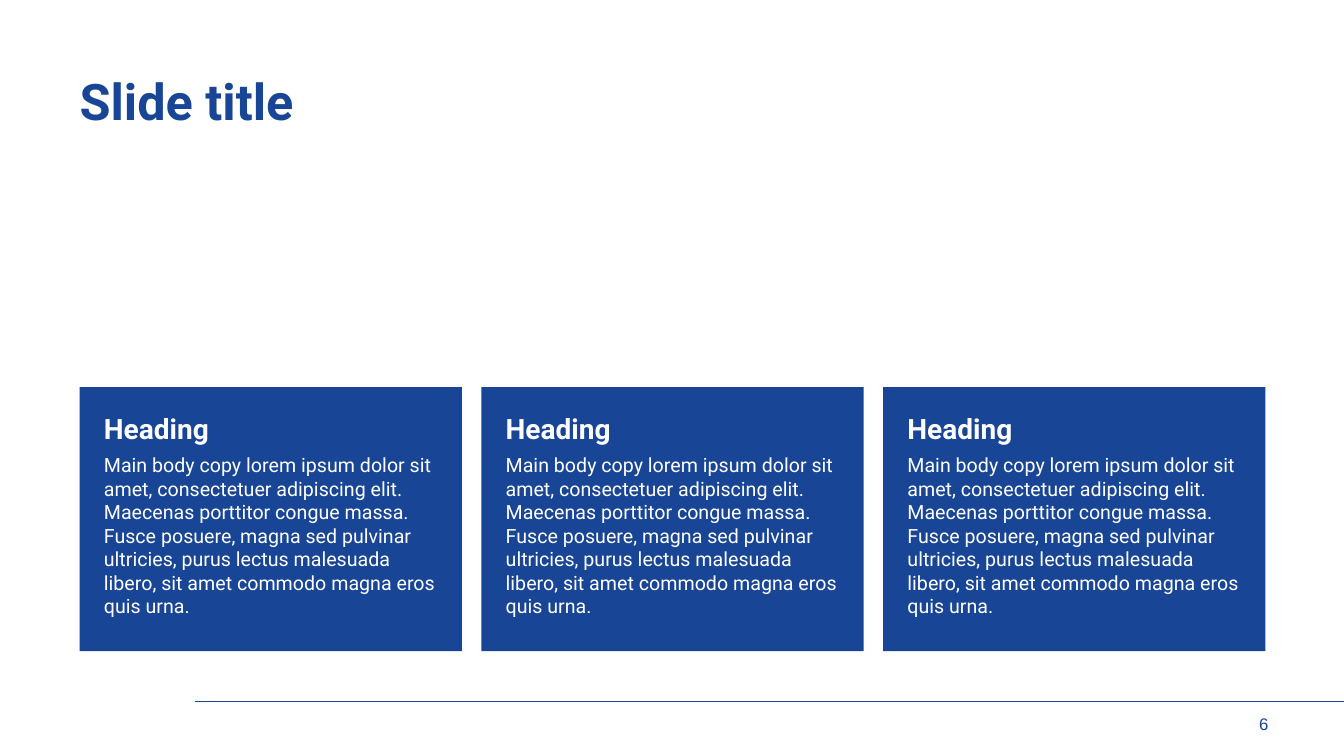
from lxml.etree import SubElement
from pptx import Presentation
from pptx.dml.color import RGBColor
from pptx.enum.shapes import MSO_CONNECTOR
from pptx.enum.text import MSO_ANCHOR, MSO_AUTO_SIZE, PP_ALIGN
from pptx.oxml.ns import qn
from pptx.util import Inches, Pt

BLUE, WHITE = "184596", "FFFFFF"
COPY = ("Main body copy lorem ipsum dolor sit amet, consectetuer adipiscing elit. "
        "Maecenas porttitor congue massa. Fusce posuere, magna sed pulvinar ultricies, "
        "purus lectus malesuada libero, sit amet commodo magna eros quis urna.")


def place(shape, left, top, width, height, inset=0):
    """Set the box of a shape and make its text frame plain: top, wrapped, even margins."""
    shape.left, shape.top = Inches(left), Inches(top)
    shape.width, shape.height = Inches(width), Inches(height)
    frame = shape.text_frame
    frame.word_wrap = True
    frame.auto_size = MSO_AUTO_SIZE.NONE
    frame.vertical_anchor = MSO_ANCHOR.TOP
    frame.margin_left = frame.margin_right = Inches(inset)
    frame.margin_top = frame.margin_bottom = Inches(inset)
    return frame


def style(para, size, color, bold=False, font="Roboto", align=PP_ALIGN.LEFT):
    para.alignment = align
    for run in para.runs:
        run.font.name, run.font.size, run.font.bold = font, Pt(size), bold
        run.font.color.rgb = RGBColor.from_string(color)


deck = Presentation()
deck.slide_width, deck.slide_height = Inches(13.33), Inches(7.5)
slide = deck.slides.add_slide(deck.slide_layouts.get_by_name("Comparison"))

# Footer rule
rule = slide.shapes.add_connector(
    MSO_CONNECTOR.STRAIGHT, Inches(1.93), Inches(6.96), Inches(13.33), Inches(6.96))
rule.line.color.rgb = RGBColor.from_string(BLUE)
rule.line.width = Pt(0.75)
SubElement(rule.element.spPr, qn("a:effectLst"))

# Title
title = place(slide.shapes.title, 0.79, 0.79, 11.76, 0.63)
title.text = "Slide title"
title.paragraphs[0].line_spacing = 0.85
style(title.paragraphs[0], 36, BLUE, bold=True)

# Three cards in equal columns
holders = list(slide.placeholders)[1:]
cards, spare = holders[:3], holders[3]
spare.element.getparent().remove(spare.element)
for i, card in enumerate(cards):
    body = place(card, 0.79 + i * 3.985, 3.84, 3.79, 2.62, inset=0.24)
    card.fill.solid()
    card.fill.fore_color.rgb = RGBColor.from_string(BLUE)
    body.text = "Heading\n" + COPY
    head, text = body.paragraphs
    for para, gap in ((head, 0), (text, 5.7)):
        props = para._p.get_or_add_pPr()
        props.set("marL", "0")
        props.set("indent", "0")
        SubElement(props, qn("a:buNone"))
        para.space_before = Pt(gap)
    style(head, 20, WHITE, bold=True)
    style(text, 14, WHITE)

# Page number
page = place(slide.shapes.add_textbox(0, 0, 0, 0), 12.3, 7.1, 0.28, 0.21)
page.text = "6"
page.paragraphs[0].line_spacing = 0.9
style(page.paragraphs[0], 12, BLUE, font="Arial", align=PP_ALIGN.RIGHT)

deck.save("out.pptx")
